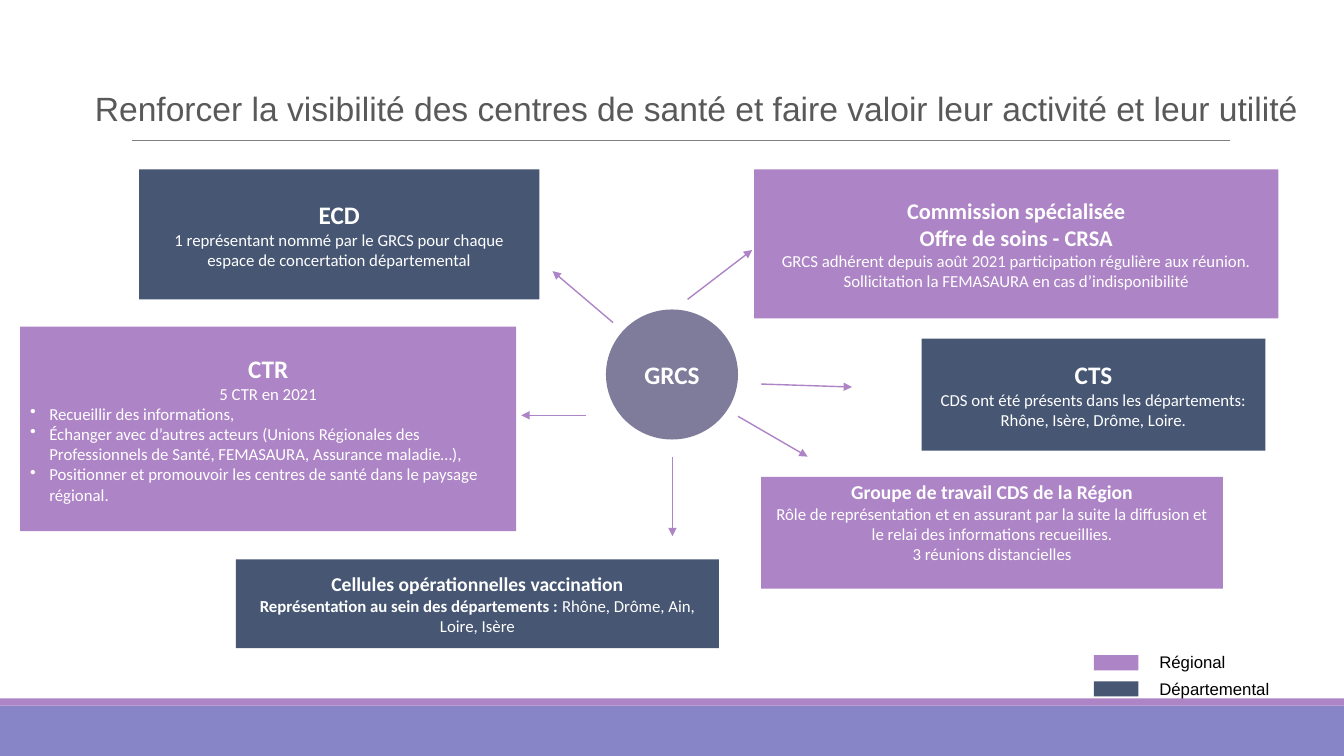
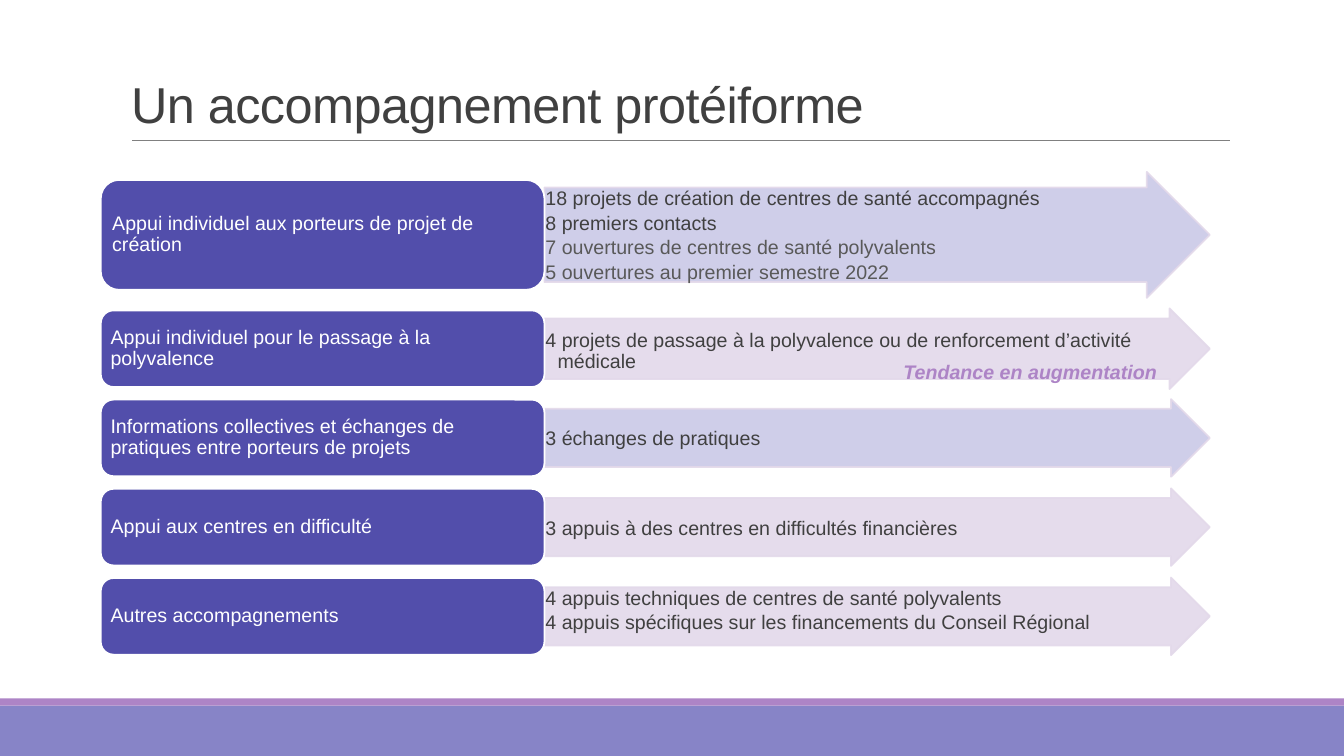
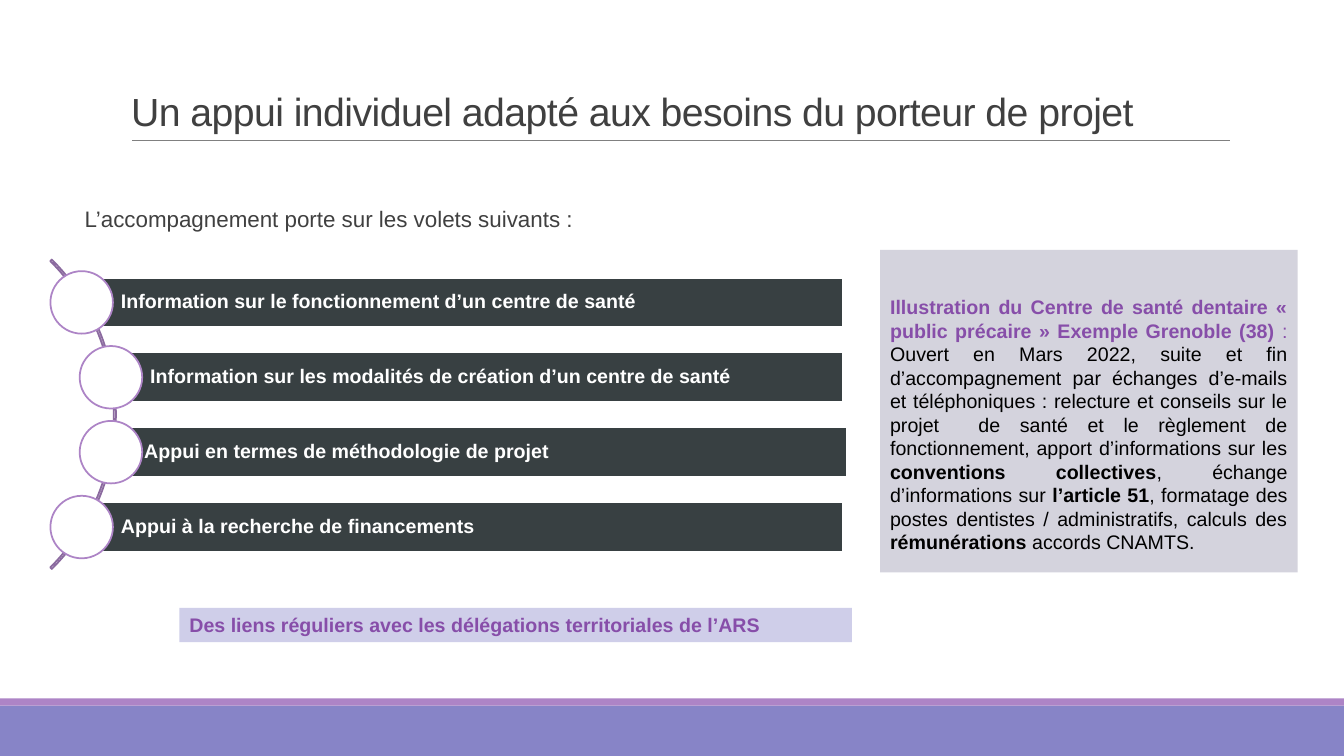
from lxml import etree
from pptx import Presentation
from pptx.dml.color import RGBColor
from pptx.enum.shapes import MSO_CONNECTOR, MSO_SHAPE
from pptx.enum.text import MSO_ANCHOR, MSO_AUTO_SIZE, PP_ALIGN
from pptx.oxml.ns import qn
from pptx.util import Inches, Pt

RECT, OVAL, ARC = MSO_SHAPE.RECTANGLE, MSO_SHAPE.OVAL, MSO_SHAPE.BLOCK_ARC
ROUNDED, ARROW = MSO_SHAPE.ROUNDED_RECTANGLE, MSO_SHAPE.RIGHT_ARROW
LEFT, CENTER, JUSTIFY = PP_ALIGN.LEFT, PP_ALIGN.CENTER, PP_ALIGN.JUSTIFY
TOP, MIDDLE, BOTTOM = MSO_ANCHOR.TOP, MSO_ANCHOR.MIDDLE, MSO_ANCHOR.BOTTOM

WHITE = RGBColor(0xFF, 0xFF, 0xFF)
BLACK = RGBColor(0, 0, 0)
INK = RGBColor(0x40, 0x40, 0x40)
SOFT_INK = RGBColor(0x59, 0x59, 0x59)
RULE_GREY = RGBColor(0x80, 0x80, 0x80)
PERIWINKLE = RGBColor(0x87, 0x84, 0xC7)
MAUVE = RGBColor(0xAD, 0x84, 0xC6)
NAVY = RGBColor(0x46, 0x56, 0x73)
HUB_GREY = RGBColor(0x7F, 0x7B, 0x9A)
INDIGO = RGBColor(0x52, 0x4E, 0xAB)
PALE_BLUE = RGBColor(0xCF, 0xCE, 0xE9)
LILAC = RGBColor(0xE3, 0xD9, 0xEA)
CHARCOAL = RGBColor(0x38, 0x40, 0x42)
PLUM = RGBColor(0x8B, 0x6A, 0x9F)
VIOLET = RGBColor(0x87, 0x4E, 0xA9)
MIST = RGBColor(0xD4, 0xD3, 0xDD)

WIDTH, HEIGHT = 13.33, 7.5
TITLE_BOX = (1.2, 0.31, 11, 1.07)
STYLE = dict(size=14, font="Arial", color=WHITE, bold=False, italic=False,
             align=LEFT, spacing=1.0, after=0, indent=0, hang=0, bullet=None, tracking=0)

# Slide 1: a line is its text, or (text or runs, style changes)
HEAD18, HEAD16, HEAD14 = (dict(size=size, bold=True) for size in (18, 16, 14))
DOT = dict(align=LEFT, bullet="•", indent=0.19, hang=0.19)
BODIES = [
    ((1.38, 1.68, 3.97, 1.29), NAVY, MIDDLE, [
        ("ECD", HEAD18),
        "1 représentant nommé par le GRCS pour chaque espace de concertation départemental"]),
    ((0.2, 3.24, 4.92, 2.03), MAUVE, MIDDLE, [
        ("CTR", HEAD18),
        "5 CTR en 2021",
        ("Recueillir des informations,", DOT),
        ("Échanger avec d’autres acteurs (Unions Régionales des Professionnels de Santé, "
         "FEMASAURA, Assurance maladie…),", DOT),
        ("Positionner et promouvoir les centres de santé dans le paysage régional.", DOT)]),
    ((7.55, 4.73, 4.58, 1.11), MAUVE, TOP, [
        ("Groupe de travail CDS de la Région", HEAD14),
        "Rôle de représentation et en assurant par la suite la diffusion et le relai "
        "des informations recueillies.",
        "3 réunions distancielles"]),
    ((9.14, 3.36, 3.41, 1.11), NAVY, MIDDLE, [
        ("CTS", HEAD18),
        "CDS ont été présents dans les départements: Rhône, Isère, Drôme, Loire."]),
    ((2.34, 5.55, 4.79, 0.88), NAVY, MIDDLE, [
        ("Cellules opérationnelles vaccination", HEAD14),
        ([("Représentation au sein des départements : ", dict(bold=True)),
          ("Rhône, Drôme, Ain, Loire, Isère", {})], {})]),
    ((7.48, 1.68, 5.2, 1.48), MAUVE, MIDDLE, [
        ("Commission spécialisée", HEAD16),
        ("Offre de soins - CRSA", HEAD16),
        "GRCS adhérent depuis août 2021 participation régulière aux réunion. "
        "Sollicitation la FEMASAURA en cas d’indisponibilité"]),
]
SPOKES = [
    ((6.08, 3.2), (5.48, 2.69)),
    ((5.81, 4.12), (5.17, 4.12)),
    ((6.82, 2.97), (7.46, 2.48)),
    ((7.55, 3.81), (8.45, 3.84)),
    ((7.32, 4.13), (8.01, 4.53)),
    ((6.67, 4.53), (6.67, 5.32)),
]
LEGEND = [("Régional", MAUVE), ("Départemental", NAVY)]

# Slide 2: label, label height, arrow height, arrow fill, space above the results, results
SUPPORTS = [
    ("Appui individuel aux porteurs de projet de création", 1.09, 1.25, PALE_BLUE, 0.01, [
        "18 projets de création de centres de santé accompagnés",
        "8 premiers contacts",
        ("7 ouvertures de centres de santé polyvalents", dict(color=SOFT_INK)),
        ("5 ouvertures au premier semestre 2022", dict(color=SOFT_INK))]),
    ("Appui individuel pour le passage à la polyvalence", 0.76, 0.8, LILAC, 0.12, [
        "4 projets de passage à la polyvalence ou de renforcement d’activité médicale"]),
    ("Informations collectives et échanges de pratiques entre porteurs de projets",
     0.76, 0.77, PALE_BLUE, 0.2, ["3 échanges de pratiques"]),
    ("Appui aux centres en difficulté", 0.76, 0.77, LILAC, 0.2, [
        "3 appuis à des centres en difficultés financières"]),
    ("Autres accompagnements", 0.76, 0.77, LILAC, 0.01, [
        "4 appuis techniques de centres de santé polyvalents",
        "4 appuis spécifiques sur les financements du Conseil Régional"]),
]

# Slide 3: text, left of the circle, shift of the bar, left margin of the text
TOPICS = [
    ("Information sur le fonctionnement d’un centre de santé", 0.5, 0, 0.39),
    ("Information sur les modalités de création d’un centre de santé", 0.79, 0, 0.39),
    ("Appui en termes de méthodologie de projet", 0.79, 0.04, 0.29),
    ("Appui à la recherche de financements", 0.5, 0, 0.39),
]
STRONG, ACCENT = dict(bold=True), dict(color=VIOLET)
ILLUSTRATION = [
    ("Illustration du Centre de santé dentaire « public précaire » Exemple Grenoble (38)",
     STRONG | ACCENT),
    (" :", ACCENT),
    (" Ouvert en Mars 2022, suite et fin d’accompagnement par échanges d’e-mails et "
     "téléphoniques : relecture et conseils sur le projet  de santé et le règlement de "
     "fonctionnement, apport d’informations sur les ", {}),
    ("conventions collectives", STRONG),
    (", échange d’informations sur ", {}),
    ("l’article 51", STRONG),
    (", formatage des postes dentistes / administratifs, calculs des ", {}),
    ("rémunérations", STRONG),
    (" accords CNAMTS.", {}),
]


def draw(slide, kind, box, fill=None, line=None, adjustments=()):
    shape = slide.shapes.add_shape(kind, *map(Inches, box))
    shape.shadow.inherit = False
    for index, value in enumerate(adjustments):
        shape.adjustments[index] = value
    if fill is None:
        shape.fill.background()
    else:
        shape.fill.solid()
        shape.fill.fore_color.rgb = fill
    if line is None:
        shape.line.fill.background()
    else:
        shape.line.color.rgb = line
        shape.line.width = Pt(1.25)
    return shape


def connect(slide, start, end, color, width, arrow=True):
    connector = slide.shapes.add_connector(
        MSO_CONNECTOR.STRAIGHT, *map(Inches, (*start, *end)))
    connector.line.color.rgb = color
    connector.line.width = Pt(width)
    properties = connector._element.spPr
    if arrow:
        etree.SubElement(properties.find(qn("a:ln")), qn("a:tailEnd"), type="triangle")
    etree.SubElement(properties, qn("a:effectLst"))
    return connector


def write(shape, lines, anchor=MIDDLE, margins=(0.1, 0.05, 0.1, 0.05), wrap=True, **style):
    """Fill a shape with lines; style changes apply to all, each line may add its own."""
    frame = shape.text_frame
    frame.auto_size = MSO_AUTO_SIZE.NONE
    frame.word_wrap = wrap
    frame.vertical_anchor = anchor
    (frame.margin_left, frame.margin_top,
     frame.margin_right, frame.margin_bottom) = map(Inches, margins)
    for index, line in enumerate(lines):
        content, changes = (line, {}) if isinstance(line, str) else line
        look = STYLE | style | changes
        paragraph = frame.add_paragraph() if index else frame.paragraphs[0]
        paragraph.alignment = look["align"]
        paragraph.line_spacing = look["spacing"]
        paragraph.space_before = Pt(0)
        paragraph.space_after = Pt(look["after"])
        properties = paragraph._p.get_or_add_pPr()
        properties.set("marL", str(Inches(look["indent"])))
        properties.set("indent", str(-Inches(look["hang"])))
        if look["bullet"]:
            etree.SubElement(properties, qn("a:buChar"), char=look["bullet"])
        else:
            etree.SubElement(properties, qn("a:buNone"))
        font = paragraph.font
        font.name, font.size = look["font"], Pt(look["size"])
        font.bold, font.italic = look["bold"], look["italic"]
        font.color.rgb = look["color"]
        if look["tracking"]:
            properties.find(qn("a:defRPr")).set("spc", str(look["tracking"]))
        for text, accents in [(content, {})] if isinstance(content, str) else content:
            run = paragraph.add_run()
            run.text = text
            if "bold" in accents:
                run.font.bold = accents["bold"]
            if "color" in accents:
                run.font.color.rgb = accents["color"]


def write_box(slide, box, lines, **options):
    write(slide.shapes.add_textbox(*map(Inches, box)), lines, **options)


def place(placeholder, box):
    (placeholder.left, placeholder.top,
     placeholder.width, placeholder.height) = map(Inches, box)
    return placeholder


def set_title(slide, text, size, box=TITLE_BOX, **changes):
    style = dict(color=INK, spacing=0.85, tracking=-40) | changes
    write(place(slide.shapes.title, box), [text], anchor=BOTTOM, size=size, **style)


def dress_master(master, slide):
    """Draw the bands and the title rule, then move them from the slide to its master."""
    parts = [
        draw(slide, RECT, (0, 7, WIDTH, 0.5), PERIWINKLE),
        draw(slide, RECT, (0, 6.93, WIDTH, 0.07), MAUVE),
        connect(slide, (1.31, 1.39), (12.2, 1.39), RULE_GREY, 0.5, arrow=False),
    ]
    for number, part in enumerate(parts, start=101):
        part._element.xpath(".//p:cNvPr")[0].set("id", str(number))
        master.element.cSld.spTree.append(part._element)


def build_network(slide):
    set_title(slide, "Renforcer la visibilité des centres de santé et faire valoir "
              "leur activité et leur utilité", 24, (0.84, 0.84, 12.18, 0.48),
              color=SOFT_INK, spacing=1.0, tracking=0)
    hub = draw(slide, OVAL, (6.01, 3.07, 1.31, 1.29), HUB_GREY)
    write(hub, [("GRCS", HEAD18)], font="Calibri", align=CENTER)
    for box, fill, anchor, lines in BODIES:
        write(draw(slide, RECT, box, fill), lines, anchor=anchor,
              margins=(0.1, 0.03, 0.1, 0.03), font="Calibri", size=12, align=CENTER)
    for row, (scope, fill) in enumerate(LEGEND):
        top = 6.42 + 0.26 * row
        draw(slide, RECT, (10.85, top + 0.08, 0.44, 0.15), fill)
        write_box(slide, (11.4, top, 1.46, 0.3), [scope], anchor=TOP,
                  wrap=False, size=12, color=BLACK)
    for start, end in SPOKES:
        connect(slide, start, end, MAUVE, 1)


def build_supports(slide):
    set_title(slide, "Un accompagnement protéiforme", 36)
    left, split, right = 1, 5.4, 12
    for row, (label, label_height, arrow_height, fill, above, results) in enumerate(SUPPORTS):
        middle = 3.46 + 0.885 * (row - 1) if row else 2.33
        arrow = draw(slide, ARROW, (split, middle - arrow_height / 2, right - split, arrow_height),
                     fill, LILAC, (0.75, 0.5))
        for tint in arrow._element.spPr.xpath(f".//a:srgbClr[@val='{LILAC}']"):
            etree.SubElement(tint, qn("a:alpha"), val="90000")
        write(arrow, results, anchor=TOP, margins=(0.01, above, 0.01, 0), color=INK,
              spacing=0.9, after=2.5, indent=0.12, hang=0.12)
        tag = draw(slide, ROUNDED, (left, middle - label_height / 2, split - left, label_height),
                   INDIGO, WHITE)
        write(tag, [label], margins=(0.06, 0.03, 0.06, 0.03), spacing=0.9)
    write_box(slide, (8.95, 3.59, 2.99, 0.24), ["Tendance en augmentation"], anchor=TOP,
              margins=(0.01,) * 4, color=MAUVE, bold=True, italic=True, spacing=0.9)


def build_topics(slide):
    set_title(slide, "Un appui individuel adapté aux besoins du porteur de projet", 28)
    write(place(slide.placeholders[1], (0.77, 2.02, 11.85, 3.36)),
          ["L’accompagnement porte sur les volets suivants :"], anchor=TOP,
          margins=(0, 0.05, 0, 0.05), size=16, color=INK, spacing=0.9, indent=0.07)
    draw(slide, ARC, (-3.19, 1.94, 4.34, 4.34), line=PLUM, adjustments=(189, 27, 0.005))
    circle, bar_height, bar_right = 0.62, 0.49, 8.36
    for row, (topic, circle_left, shift, margin) in enumerate(TOPICS):
        middle = 3 + 0.743 * row
        bar_left = circle_left + circle / 2
        bar = draw(slide, RECT, (bar_left + shift, middle - bar_height / 2,
                                 bar_right - bar_left, bar_height), CHARCOAL, WHITE)
        write(bar, [topic], margins=(margin, 0.04, 0.04, 0.04), bold=True, spacing=0.9)
        draw(slide, OVAL, (circle_left, middle - circle / 2, circle, circle), WHITE, MAUVE)
    write(draw(slide, RECT, (8.73, 2.48, 4.14, 3.2), MIST), [(ILLUSTRATION, {})],
          margins=(0.1, 0.31, 0.1, 0.05), color=BLACK, align=JUSTIFY)
    write(draw(slide, RECT, (1.78, 6.03, 6.67, 0.34), PALE_BLUE),
          ["Des liens réguliers avec les délégations territoriales de l’ARS"],
          color=VIOLET, bold=True)


def main():
    deck = Presentation()
    deck.slide_width, deck.slide_height = Inches(WIDTH), Inches(HEIGHT)
    title_only, title_and_body = deck.slide_layouts[5], deck.slide_layouts[1]
    pages = [(title_only, build_network), (title_only, build_supports),
             (title_and_body, build_topics)]
    for number, (layout, build) in enumerate(pages):
        slide = deck.slides.add_slide(layout)
        if number == 0:
            dress_master(deck.slide_master, slide)
        build(slide)
    deck.save("out.pptx")


if __name__ == "__main__":
    main()
